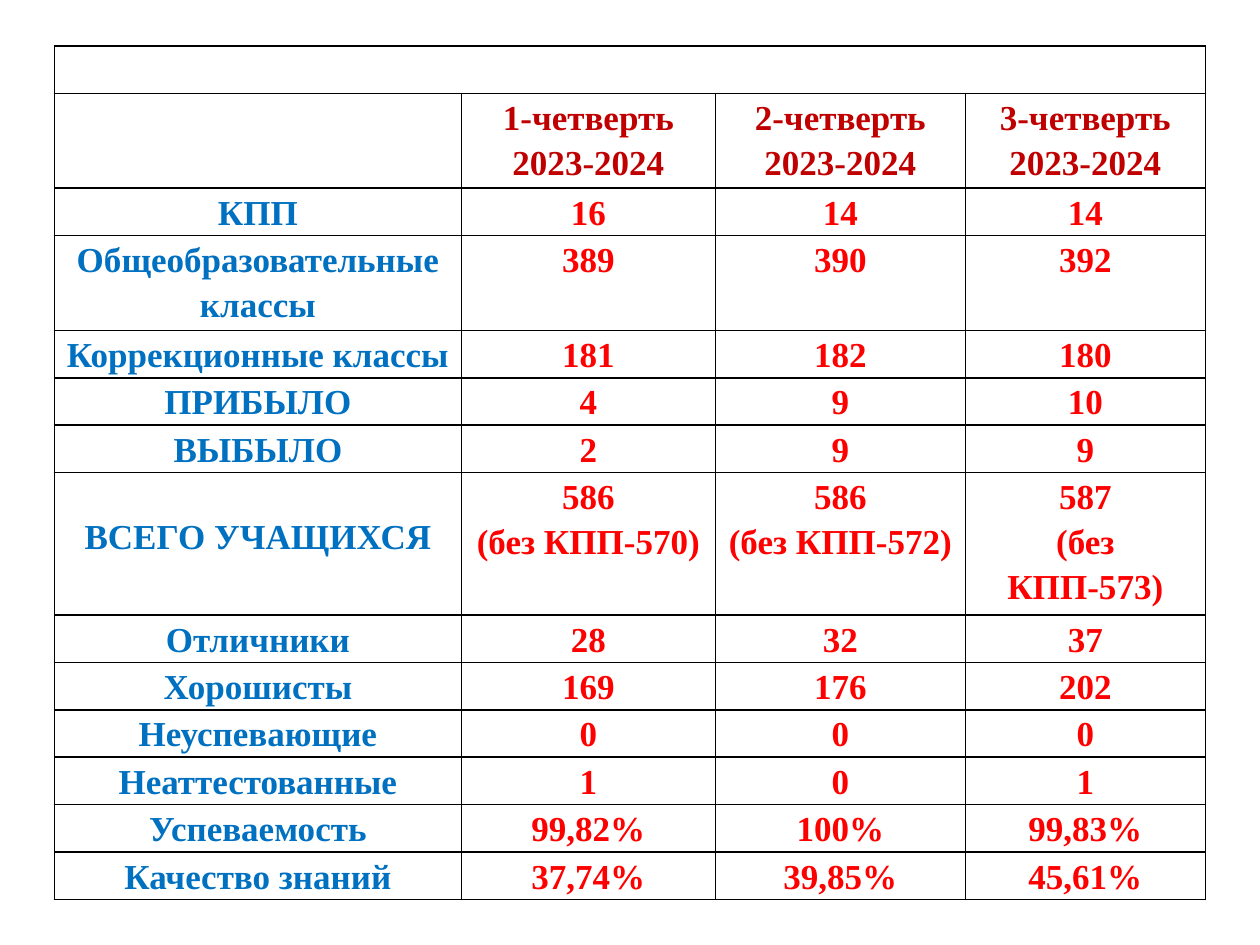
import dataclasses

import pptx
import pptx.dml.color
import pptx.enum.text
import pptx.oxml
import pptx.oxml.ns
import pptx.util

Pt = pptx.util.Pt


@dataclasses.dataclass(frozen=True)
class Theme:
    font: str = "Times New Roman"
    size: float = 20
    spacing: float = 1.15
    header: str = "C00000"
    label: str = "0070C0"
    value: str = "FF0000"
    border: str = "000000"
    border_width: float = 1
    margin: float = 5.4


THEME = Theme()
COLUMN_WIDTHS = (232.6, 145.1, 142.9, 137.1)
LINE_HEIGHT = 27.1
TOTAL_LABEL = "ВСЕГО УЧАЩИХСЯ"
HEADERS = ("", "1-четверть 2023-2024", "2-четверть 2023-2024",
           "3-четверть 2023-2024")

# Height in lines, then the label and the three quarters
ROWS = (
    (1, ("", "", "", "")),
    (2, HEADERS),
    (1, ("КПП", "16", "14", "14")),
    (2, ("Общеобразовательные классы", "389", "390", "392")),
    (1, ("Коррекционные классы", "181", "182", "180")),
    (1, ("ПРИБЫЛО", "4", "9", "10")),
    (1, ("ВЫБЫЛО", "2", "9", "9")),
    (3, (TOTAL_LABEL, "586\n(без КПП-570)", "586\n(без КПП-572)",
         "587\n(без КПП-573)")),
    (1, ("Отличники", "28", "32", "37")),
    (1, ("Хорошисты", "169", "176", "202")),
    (1, ("Неуспевающие", "0", "0", "0")),
    (1, ("Неаттестованные", "1", "0", "1")),
    (1, ("Успеваемость", "99,82%", "100%", "99,83%")),
    (1, ("Качество знаний", "37,74%", "39,85%", "45,61%")),
)


def write_text(tf, text, *, color, size=THEME.size, bold=True,
               align=pptx.enum.text.PP_ALIGN.CENTER):
    tf.text = text
    for p in tf.paragraphs:
        p.alignment = align
        p.line_spacing = THEME.spacing
        p.font.size = Pt(size)
        for r in p.runs:
            r.font.name = THEME.font
            r.font.size = Pt(size)
            r.font.bold = bold
            r.font.color.rgb = pptx.dml.color.RGBColor.from_string(color)


def set_borders(cell):
    """Outline the cell; border elements must come before the fill."""
    tc_pr = cell._tc.get_or_add_tcPr()
    for i, side in enumerate(("lnL", "lnR", "lnT", "lnB")):
        tc_pr.insert(i, pptx.oxml.parse_xml(
            f'<a:{side} {pptx.oxml.ns.nsdecls("a")} w="{Pt(THEME.border_width)}">'
            f'<a:solidFill><a:srgbClr val="{THEME.border}"/></a:solidFill>'
            f'</a:{side}>'))


def format_cell(cell, text, color):
    cell.margin_left = cell.margin_right = Pt(THEME.margin)
    cell.margin_top = cell.margin_bottom = 0
    if text == TOTAL_LABEL:
        cell.margin_top = Pt(23)
    cell.fill.background()
    set_borders(cell)
    write_text(cell.text_frame, text, color=color)


def add_results_table(slide, left, top, width, height):
    line = height / sum(lines for lines, _ in ROWS)
    scale = width / sum(COLUMN_WIDTHS)
    table = slide.shapes.add_table(
        len(ROWS), len(COLUMN_WIDTHS),
        Pt(left), Pt(top), Pt(width), Pt(height)).table
    table.first_row = table.horz_banding = False
    for column, column_width in zip(table.columns, COLUMN_WIDTHS):
        column.width = Pt(column_width * scale)
    for i, (lines, texts) in enumerate(ROWS):
        table.rows[i].height = Pt(lines * line)
        for j, text in enumerate(texts):
            if texts is HEADERS:
                color = THEME.header
            else:
                color = THEME.value if j else THEME.label
            format_cell(table.cell(i, j), text, color)
    table.cell(0, 0).merge(table.cell(0, len(COLUMN_WIDTHS) - 1))


def main():
    prs = pptx.Presentation()
    prs.slide_width, prs.slide_height = Pt(720), Pt(540)
    slide = prs.slides.add_slide(prs.slide_layouts[6])
    add_results_table(slide, 31.1, 26.2, sum(COLUMN_WIDTHS),
                      LINE_HEIGHT * sum(lines for lines, _ in ROWS))
    prs.save("out.pptx")


if __name__ == "__main__":
    main()
